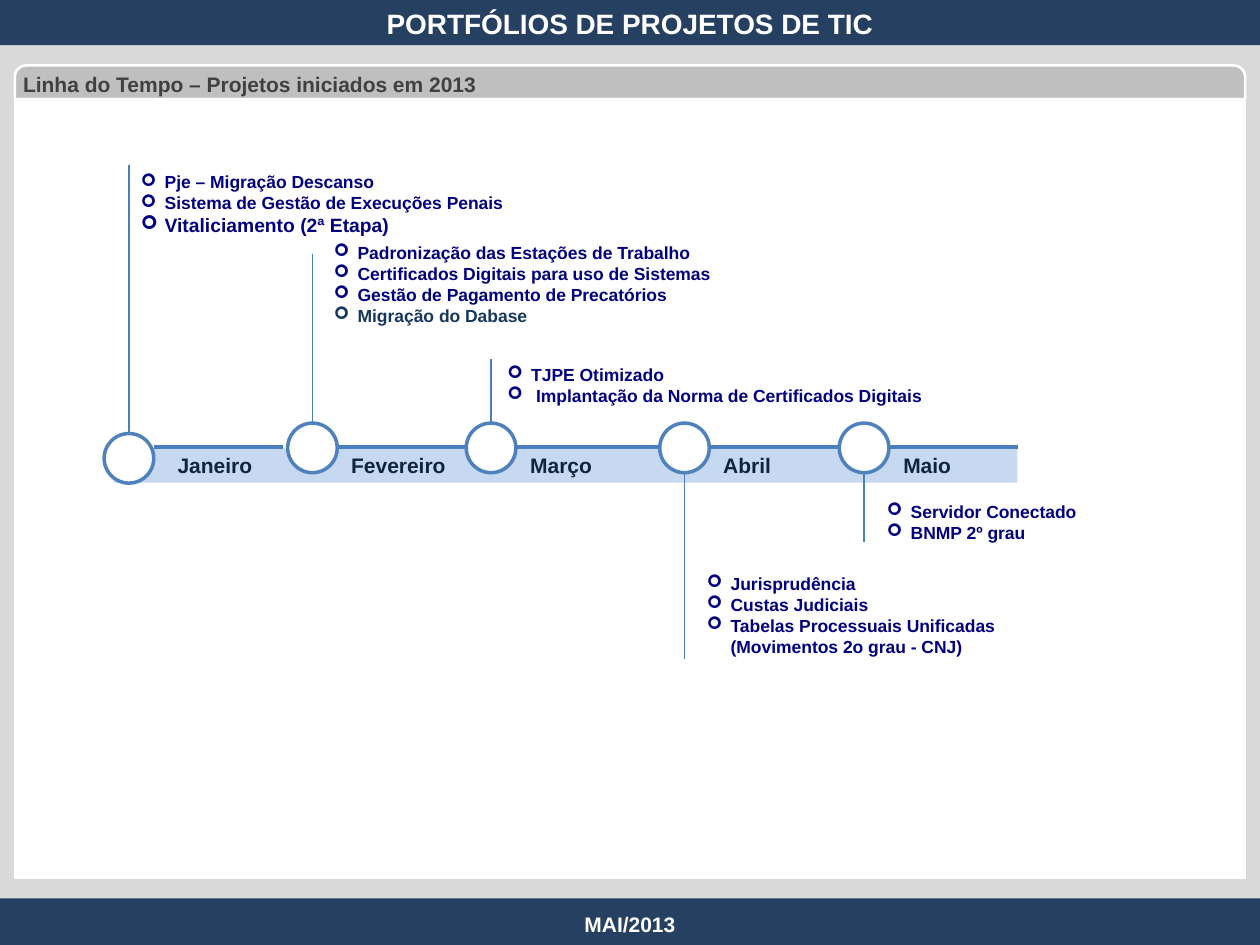
import pptx
import pptx.util
import pptx.dml.color
import pptx.enum.shapes
import pptx.enum.text
import pptx.oxml.ns
import lxml.etree

Cm = pptx.util.Cm
Pt = pptx.util.Pt
RGB = pptx.dml.color.RGBColor
Kind = pptx.enum.shapes.MSO_SHAPE
Align = pptx.enum.text.PP_ALIGN
Anchor = pptx.enum.text.MSO_ANCHOR
qn = pptx.oxml.ns.qn

WHITE = RGB(0xFF, 0xFF, 0xFF)
NAVY = RGB(0x25, 0x40, 0x61)
PALE = RGB(0xD9, 0xD9, 0xD9)
GREY = RGB(0xBF, 0xBF, 0xBF)
DARK = RGB(0x40, 0x40, 0x40)
BAND = RGB(0xC6, 0xD9, 0xF1)
RING = RGB(0x4F, 0x81, 0xBD)
LINE = RGB(0x4B, 0x7E, 0xBC)
INK = RGB(0x0F, 0x24, 0x3E)
BLUE = RGB(0x00, 0x00, 0x80)
STEEL = RGB(0x17, 0x37, 0x5E)

# Content
TITLE = "PORTFÓLIOS DE PROJETOS DE TIC"
HEAD = "Linha do Tempo – Projetos iniciados em 2013"
FOOT = "MAI/2013"

# Month, circle left and top, label left, segment length, stem end
MONTHS = [
    ("Janeiro", 2.1, 8.74, 3.33, 2.6, 3.33),
    ("Fevereiro", 5.8, 8.53, 6.83, 2.6, 5.13),
    ("Março", 9.4, 8.53, 10.44, 2.92, 7.24),
    ("Abril", 13.3, 8.53, 14.33, 2.6, 13.28),
    ("Maio", 16.92, 8.53, 17.96, 2.6, 10.92),
]

# Box (left, top, width, height), then items (text, size, colour)
LISTS = [
    ((2.59, 3.33, 8.56, 1.5), [
        ("Pje – Migração Descanso", 10, BLUE),
        ("Sistema de Gestão de Execuções Penais", 10, BLUE),
        ("Vitaliciamento (2ª Etapa)", 11, BLUE)]),
    ((6.48, 4.75, 10.13, 1.78), [
        ("Padronização das Estações de Trabalho", 10, BLUE),
        ("Certificados Digitais para uso de Sistemas", 10, BLUE),
        ("Gestão de Pagamento de Precatórios", 10, BLUE),
        ("Migração do Dabase", 10, STEEL)]),
    ((9.98, 7.21, 9, 1.09), [
        ("TJPE Otimizado", 10, BLUE),
        (" Implantação da Norma de Certificados Digitais", 10, BLUE)]),
    ((14, 11.43, 6.71, 1.85), [
        ("Jurisprudência", 10, BLUE),
        ("Custas Judiciais", 10, BLUE),
        ("Tabelas Processuais Unificadas (Movimentos 2o grau - CNJ)",
         10, BLUE)]),
    ((17.63, 9.98, 5.79, 0.94), [
        ("Servidor Conectado", 10, BLUE),
        ("BNMP 2º grau", 10, BLUE)]),
]
RING_D = 1.0
AXIS = 9.02

deck = pptx.Presentation()
deck.slide_width, deck.slide_height = Cm(25.4), Cm(19.05)
slide = deck.slides.add_slide(deck.slide_layouts[6])
shapes = slide.shapes


def block(kind, box, fill, edge=None, width=1.5):
    shape = shapes.add_shape(kind, *map(Cm, box))
    shape.shadow.inherit = False
    shape.fill.solid()
    shape.fill.fore_color.rgb = fill
    if edge is None:
        shape.line.fill.background()
    else:
        shape.line.color.rgb = edge
        shape.line.width = Pt(width)
    return shape


def line(x1, y1, x2, y2, width):
    link = shapes.add_connector(pptx.enum.shapes.MSO_CONNECTOR.STRAIGHT,
                                *map(Cm, (x1, y1, x2, y2)))
    link.line.color.rgb = LINE
    link.line.width = Pt(width)
    props = link._element.find(qn("p:spPr"))
    lxml.etree.SubElement(props, qn("a:effectLst"))


def style(para, size, color, align=Align.LEFT):
    para.alignment = align
    font = para.font
    font.name, font.size, font.bold = "Arial", Pt(size), True
    font.color.rgb = color


def label(box, text, size, color, align=Align.LEFT, anchor=Anchor.MIDDLE):
    frame = shapes.add_textbox(*map(Cm, box)).text_frame
    frame.word_wrap = True
    frame.vertical_anchor = anchor
    frame.text = text
    style(frame.paragraphs[0], size, color, align)


def bullet(para):
    props = para._p.get_or_add_pPr()
    props.set("marL", str(Cm(0.48)))
    props.set("indent", str(-Cm(0.48)))
    font = lxml.etree.SubElement(props, qn("a:buFont"))
    font.set("typeface", "Wingdings")
    lxml.etree.SubElement(props, qn("a:buChar")).set("char", "➢")


# Page frame
block(Kind.RECTANGLE, (0, 0.91, 25.4, 17.4), PALE)
block(Kind.RECTANGLE, (0, 18.11, 25.4, 0.94), NAVY)
block(Kind.RECTANGLE, (0, 0, 25.4, 0.91), NAVY)
label((0, 18.14, 25.4, 0.99), FOOT, 12, WHITE, Align.CENTER)
label((0, 0, 25.4, 0.94), TITLE, 16, WHITE, Align.CENTER, Anchor.TOP)

# Panel and its heading
block(Kind.RECTANGLE, (0.3, 2, 24.8, 15.7), WHITE, WHITE)
head = block(Kind.ROUND_2_SAME_RECTANGLE, (0.3, 1.32, 24.8, 0.68), GREY, WHITE)
head.adjustments[0] = 0.335
frame = head.text_frame
frame.margin_left = frame.margin_right = Cm(0.1)
frame.margin_top = frame.margin_bottom = Cm(0.1)
frame.vertical_anchor = Anchor.MIDDLE
frame.text = HEAD
style(frame.paragraphs[0], 12, DARK)

# Timeline
block(Kind.RECTANGLE, (2.3, 9.04, 18.21, 0.69), BAND)
for name, x, y, left, span, tip in MONTHS:
    mid = x + RING_D / 2
    line(mid, y if tip < y else y + RING_D, mid, tip, 0.75)
    line(x + RING_D, AXIS, x + RING_D + span, AXIS, 2.25)
    block(Kind.OVAL, (x, y, RING_D, RING_D), WHITE, RING, 2)
    label((left, 9.03, 2.57, 0.69), name, 12, INK)

# Project lists
for box, items in LISTS:
    frame = shapes.add_textbox(*map(Cm, box)).text_frame
    frame.word_wrap = True
    for i, (text, size, color) in enumerate(items):
        para = frame.paragraphs[0] if i == 0 else frame.add_paragraph()
        para.text = text
        bullet(para)
        style(para, size, color)

deck.save("out.pptx")
